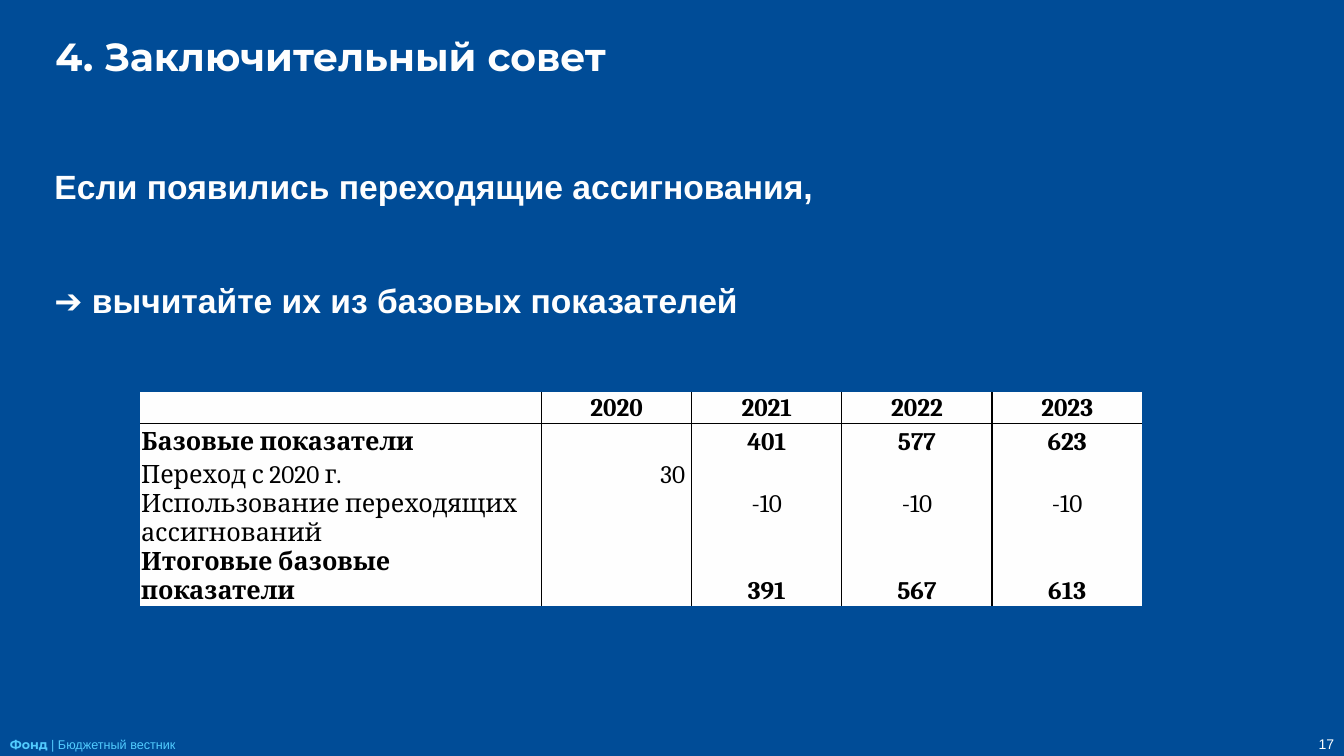
"""Build the closing-advice slide with its table of baseline figures."""
from dataclasses import dataclass

from lxml import etree
from pptx import Presentation
from pptx.dml.color import RGBColor
from pptx.enum.text import MSO_ANCHOR, MSO_AUTO_SIZE, PP_ALIGN
from pptx.oxml.ns import qn
from pptx.util import Inches, Pt

LEFT, CENTER, RIGHT = PP_ALIGN.LEFT, PP_ALIGN.CENTER, PP_ALIGN.RIGHT
TOP, MIDDLE, BOTTOM = MSO_ANCHOR.TOP, MSO_ANCHOR.MIDDLE, MSO_ANCHOR.BOTTOM
NO_FIT = MSO_AUTO_SIZE.NONE

TITLE = "4. Заключительный совет"
ADVICE = [
    ("Если появились переходящие ассигнования,", 12),
    ("➔ вычитайте их из базовых показателей", 52),
]
FOOTER = ("Фонд ", "| Бюджетный вестник")
PAGE_NUMBER = "17"
ROWS = [
    ("", "2020", "2021", "2022", "2023"),
    ("Базовые показатели", "", "401", "577", "623"),
    ("Переход с 2020 г.", "30", "", "", ""),
    ("Использование переходящих ассигнований", "", "-10", "-10", "-10"),
    ("Итоговые базовые показатели", "", "391", "567", "613"),
]
BOLD_ROWS = {0, 1, 4}
TOP_ROWS = {3}
CARRYOVER_CELL = (2, 1)
ROW_HEIGHTS = [0.31, 0.33, 0.33, 0.3, 0.26]
COLUMN_WIDTHS = [3.98] + [1.49] * 4
NO_STYLE = "{2D5ABB26-0587-4C30-8999-92F81FD0307C}"


@dataclass(frozen=True)
class Theme:
    """Colours, fonts and type sizes."""
    background: str = "004C97"
    light: str = "FEFEFE"
    accent: str = "52CCFF"
    ink: str = "000000"
    heading: str = "Montserrat"
    text: str = "Arial"
    figures: str = "Cambria"
    title_size: int = 28
    body_size: int = 24
    table_size: int = 18
    footer_size: int = 9
    number_size: int = 10


THEME = Theme()


def set_font(font, name, size, colour, bold=False):
    """Apply one type setting."""
    font.name, font.size, font.bold = name, Pt(size), bold
    font.color.rgb = RGBColor.from_string(colour)


def place(box, left, top, width, height):
    """Position a shape in inches."""
    box.left, box.top = Inches(left), Inches(top)
    box.width, box.height = Inches(width), Inches(height)


def set_frame(frame, anchor, top_inset=0):
    """Wrap the text without side insets."""
    frame.word_wrap, frame.auto_size = True, NO_FIT
    frame.vertical_anchor = anchor
    frame.margin_left = frame.margin_right = frame.margin_bottom = 0
    frame.margin_top = Inches(top_inset)


def add_title(page):
    """Fill the title placeholder."""
    box = page.shapes.title
    place(box, 0.55, 0.05, 11.62, 1.07)
    set_frame(box.text_frame, MIDDLE)
    box.text_frame.text = TITLE
    para = box.text_frame.paragraphs[0]
    para.alignment, para.line_spacing = LEFT, 0.9
    set_font(para.font, THEME.heading, THEME.title_size, THEME.light, True)


def add_advice(page):
    """Fill the body placeholder with unbulleted lines."""
    box = page.placeholders[1]
    place(box, 0.54, 1.5, 12.66, 5.55)
    set_frame(box.text_frame, TOP, 0.15)
    box.text_frame.text = "\n".join(line for line, gap in ADVICE)
    for para, (line, gap) in zip(box.text_frame.paragraphs, ADVICE):
        para.space_before = Pt(gap)
        set_font(para.font, THEME.text, THEME.body_size, THEME.light, True)
        properties = para._p.get_or_add_pPr()
        properties.set("marL", "0")
        properties.set("indent", "0")
        properties.insert_element_before(
            etree.Element(qn("a:buNone")), "a:tabLst", "a:defRPr", "a:extLst")


def add_footer(page):
    """Add the publication line and the page number."""
    box = page.shapes.add_textbox(0, Inches(7.26), Inches(10), Inches(0.25))
    box.text_frame.word_wrap = True
    para = box.text_frame.paragraphs[0]
    for text, name, bold in zip(FOOTER, (THEME.heading, THEME.text), (True, False)):
        span = para.add_run()
        span.text = text
        set_font(span.font, name, THEME.footer_size, THEME.accent, bold)

    box = page.shapes.add_textbox(Inches(12.01), Inches(7.24), Inches(1.32), Inches(0.27))
    box.text_frame.word_wrap = True
    box.text_frame.vertical_anchor = BOTTOM
    para = box.text_frame.paragraphs[0]
    para.text, para.alignment = PAGE_NUMBER, RIGHT
    set_font(para.font, THEME.text, THEME.number_size, THEME.light)


def set_borders(cell, visible):
    """Draw the named cell sides and hide the others."""
    properties = cell._tc.get_or_add_tcPr()
    for index, side in enumerate("LRTB"):
        line = etree.Element(qn(f"a:ln{side}"), w=str(Pt(1)))
        if side in visible:
            fill = etree.SubElement(line, qn("a:solidFill"))
            etree.SubElement(fill, qn("a:srgbClr"), val=THEME.ink)
        else:
            etree.SubElement(line, qn("a:noFill"))
        properties.insert(index, line)


def sides_of(row, column):
    """Name the ruled sides: inner verticals and the header rule."""
    return {
        side for side, ruled in (
            ("L", column > 0),
            ("R", column < len(COLUMN_WIDTHS) - 1),
            ("T", row == 1),
            ("B", row == 0),
        ) if ruled
    }


def fill_cell(cell, row, column, text):
    """Write and format one table cell."""
    cell.margin_left = cell.margin_right = Inches(0.01)
    cell.margin_top = cell.margin_bottom = 0
    cell.vertical_anchor = TOP if row in TOP_ROWS else BOTTOM
    cell.fill.solid()
    cell.fill.fore_color.rgb = RGBColor.from_string(THEME.light)
    set_borders(cell, sides_of(row, column))
    para = cell.text_frame.paragraphs[0]
    para.text = text
    para.alignment = CENTER if column else LEFT
    set_font(para.font, THEME.figures, THEME.table_size, THEME.ink, row in BOLD_ROWS)
    if (row, column) == CARRYOVER_CELL:
        para.alignment = LEFT
        para._p.get_or_add_pPr().set("marL", str(Inches(1.17)))


def add_figures(page):
    """Add the table of baseline figures."""
    frame = page.shapes.add_table(
        len(ROWS), len(COLUMN_WIDTHS), Inches(1.39), Inches(3.89),
        Inches(sum(COLUMN_WIDTHS)), Inches(sum(ROW_HEIGHTS)))
    table = frame.table
    table.first_row = table.horz_banding = False
    table._tbl.tblPr.find(qn("a:tableStyleId")).text = NO_STYLE
    for column, width in zip(table.columns, COLUMN_WIDTHS):
        column.width = Inches(width)
    for row, (height, texts) in enumerate(zip(ROW_HEIGHTS, ROWS)):
        table.rows[row].height = Inches(height)
        for column, text in enumerate(texts):
            fill_cell(table.cell(row, column), row, column, text)


def main():
    """Assemble and save the deck."""
    deck = Presentation()
    deck.slide_width, deck.slide_height = Inches(13.33), Inches(7.5)
    page = deck.slides.add_slide(deck.slide_layouts[1])
    page.background.fill.solid()
    page.background.fill.fore_color.rgb = RGBColor.from_string(THEME.background)
    add_title(page)
    add_advice(page)
    add_figures(page)
    add_footer(page)
    deck.save("out.pptx")


if __name__ == "__main__":
    main()
